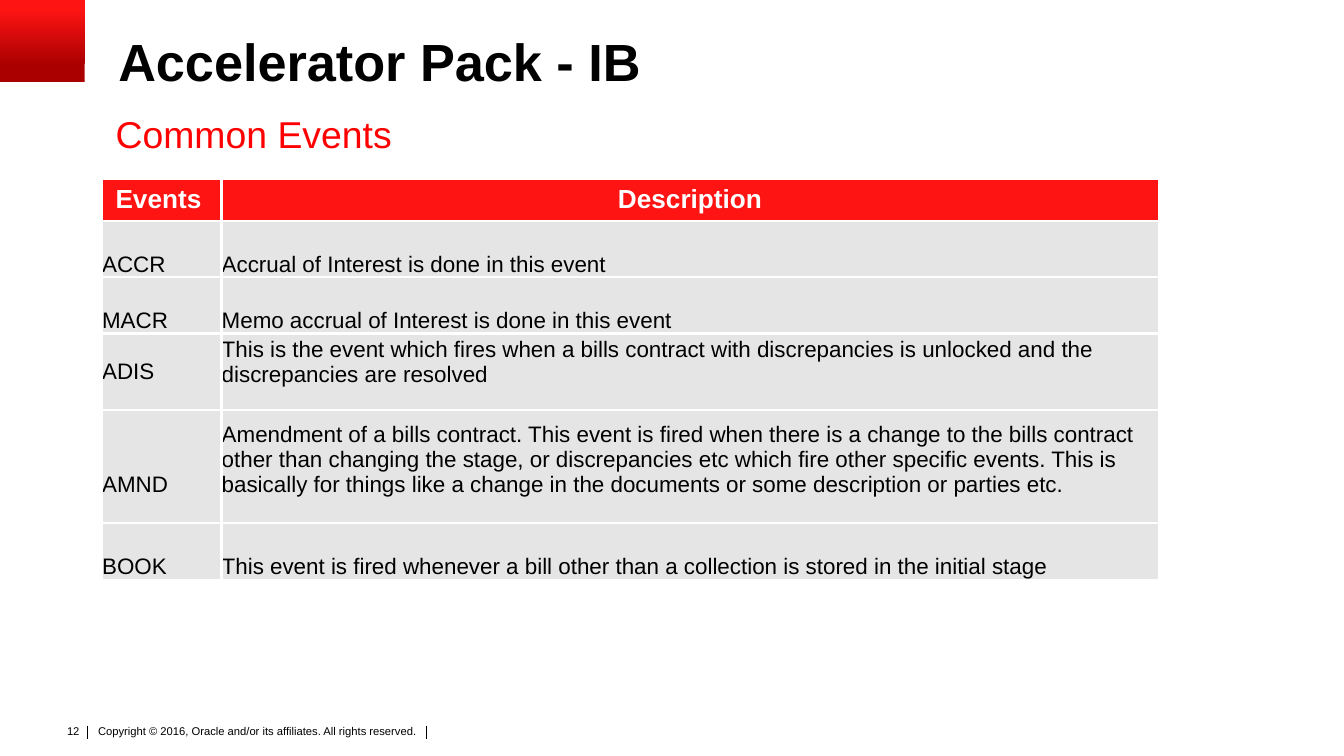
import pptx
import pptx.util
import pptx.dml.color
import pptx.enum.shapes
import pptx.enum.text
import pptx.oxml
import pptx.oxml.ns

Inches = pptx.util.Inches
Pt = pptx.util.Pt
RGB = pptx.dml.color.RGBColor
ALIGN = pptx.enum.text.PP_ALIGN
ANCHOR = pptx.enum.text.MSO_ANCHOR

BLACK = RGB(0x00, 0x00, 0x00)
WHITE = RGB(0xFF, 0xFF, 0xFF)
RED = RGB(0xFF, 0x00, 0x00)
BRIGHT = RGB(0xFF, 0x14, 0x14)
DARK = RGB(0xAA, 0x00, 0x00)
GREY = RGB(0xE5, 0xE5, 0xE5)

COLS = [0.89, 6.97]
ROWS = [0.31, 0.42, 0.42, 0.56, 0.84, 0.42]
EVENTS = [
    ("ACCR", "Accrual of Interest is done in this event"),
    ("MACR", "Memo accrual of Interest is done in this event"),
    ("ADIS", "This is the event which fires when a bills contract with "
             "discrepancies is unlocked and the discrepancies are resolved"),
    ("AMND", "Amendment of a bills contract. This event is fired when there is a change to the bills contract\n"
             "other than changing the stage, or discrepancies etc which fire other specific events. This is\n"
             "basically for things like a change in the documents or some description or parties etc."),
    ("BOOK", "This event is fired whenever a bill other than a collection is stored in the initial stage"),
]
GAPS = {"ADIS": (0, 0.17), "AMND": (0.19, 0.19)}


def add_xml(node, text):
    """Append an element, given as drawing XML, to a node."""
    space = pptx.oxml.ns.nsdecls("a")
    node.append(pptx.oxml.parse_xml(text.replace(" ", f" {space} ", 1)))


def write(frame, text, size=12, color=BLACK, bold=False, align=ALIGN.LEFT, space=1.0, plain=False):
    """Fill a text frame, one paragraph for each line."""
    frame.text = text
    for para in frame.paragraphs:
        if plain:
            props = para._p.get_or_add_pPr()
            props.set("marL", "0")
            props.set("indent", "0")
            add_xml(props, "<a:buNone />")
        para.alignment = align
        para.line_spacing = space
        para.space_before = Pt(0)
        for run in para.runs:
            run.font.name = "Arial"
            run.font.size = Pt(size)
            run.font.bold = bold
            run.font.color.rgb = color


def place(shape, left, top, width, height):
    """Move and size a shape, in inches."""
    shape.left, shape.top = Inches(left), Inches(top)
    shape.width, shape.height = Inches(width), Inches(height)


def inset(part, left, top, right, bottom):
    """Set the margins of a frame or cell, in inches."""
    part.margin_left, part.margin_top = Inches(left), Inches(top)
    part.margin_right, part.margin_bottom = Inches(right), Inches(bottom)


def add_badge(slide, left, top, width, height):
    """Draw the red corner block."""
    badge = slide.shapes.add_shape(pptx.enum.shapes.MSO_SHAPE.RECTANGLE, 0, 0, 0, 0)
    place(badge, left, top, width, height)
    badge.shadow.inherit = False
    badge.line.fill.background()
    badge.fill.gradient()
    badge.fill.gradient_angle = 90
    for stop, color, spot in zip(badge.fill.gradient_stops, (DARK, BRIGHT), (0.2, 0.9)):
        stop.color.rgb = color
        stop.position = spot


def add_heads(slide, left, top):
    """Place the title and the subtitle under it."""
    title, body = slide.shapes.title, slide.placeholders[1]
    place(title, left + 0.02, top, 8.5, 0.83)
    place(body, left, top + 0.56, 9, 0.33)
    for shape in (title, body):
        frame = shape.text_frame
        inset(frame, 0, 0, 0, 0)
        frame.auto_size = pptx.enum.text.MSO_AUTO_SIZE.NONE
        frame.vertical_anchor = ANCHOR.TOP
    write(title.text_frame, "Accelerator Pack - IB", size=28, bold=True, space=0.9)
    write(body.text_frame, "Common Events", size=20, color=RED, plain=True)


def edge(cell, sides):
    """Give a cell white borders on the sides named."""
    props = cell._tc.get_or_add_tcPr()
    for index, side in enumerate(sides):
        add_xml(props, f'<a:{side} w="{Pt(1.5)}"><a:solidFill><a:srgbClr val="{WHITE}"/>'
                       f'</a:solidFill></a:{side}>')
        props.insert(index, props[-1])


def add_grid(slide, left, top):
    """Build the table of events."""
    grid = slide.shapes.add_table(
        len(ROWS), len(COLS), Inches(left), Inches(top), Inches(sum(COLS)), Inches(sum(ROWS))).table
    for col, width in zip(grid.columns, COLS):
        col.width = Inches(width)
    for row, height in zip(grid.rows, ROWS):
        row.height = Inches(height)
    for cell, text, align in zip(grid.rows[0].cells, ("Events", "Description"), (ALIGN.LEFT, ALIGN.CENTER)):
        inset(cell, 0.1, 0.04, 0.1, 0.04)
        cell.vertical_anchor = ANCHOR.MIDDLE
        write(cell.text_frame, text, size=14, color=WHITE, bold=True, align=align)
    for index, texts in enumerate(EVENTS, 1):
        for cell, text, gap in zip(grid.rows[index].cells, texts, GAPS.get(texts[0], (0, 0))):
            inset(cell, 0, 0, 0, gap)
            cell.vertical_anchor = ANCHOR.MIDDLE if text == "ADIS" else ANCHOR.BOTTOM
            write(cell.text_frame, text)
    last = len(ROWS) - 1
    for index, row in enumerate(grid.rows):
        for cell, side in zip(row.cells, ("lnR", "lnL")):
            cell.fill.solid()
            cell.fill.fore_color.rgb = GREY if index else BRIGHT
            edge(cell, [side] + ["lnT"] * (index > 0) + ["lnB"] * (index < last))


def add_foot(slide, left, top):
    """Place the page number, the copyright line and its bars."""
    page = slide.shapes.add_textbox(0, 0, 0, 0)
    place(page, left, top, 0.3, 0.2)
    page.text_frame.word_wrap = False
    write(page.text_frame, "12", size=6, align=ALIGN.RIGHT)
    note = slide.shapes.add_textbox(0, 0, 0, 0)
    place(note, left + 0.3, top + 0.03, 2.74, 0.24)
    note.text_frame.word_wrap = True
    inset(note.text_frame, 0.04, 0.02, 0.04, 0.02)
    write(note.text_frame, "Copyright © 2016, Oracle and/or its affiliates. All rights reserved.", size=6)
    for shift in (0.26, 2.78):
        spot = Inches(left + shift)
        bar = slide.shapes.add_connector(
            pptx.enum.shapes.MSO_CONNECTOR.STRAIGHT, spot, Inches(top + 0.06), spot, Inches(top + 0.16))
        bar.line.color.rgb = BLACK
        bar.line.width = Pt(0.5)
        add_xml(bar._element.spPr, "<a:effectLst />")


def main():
    """Build the slide and save it."""
    deck = pptx.Presentation()
    deck.slide_width = Inches(10)
    deck.slide_height = deck.slide_width * 9 // 16
    slide = deck.slides.add_slide(deck.slide_layouts[1])
    add_foot(slide, 0.39, 5.34)
    add_badge(slide, 0, 0, 0.63, 0.61)
    add_heads(slide, 0.86, 0.27)
    add_grid(slide, 0.76, 1.33)
    deck.save("out.pptx")


if __name__ == "__main__":
    main()
